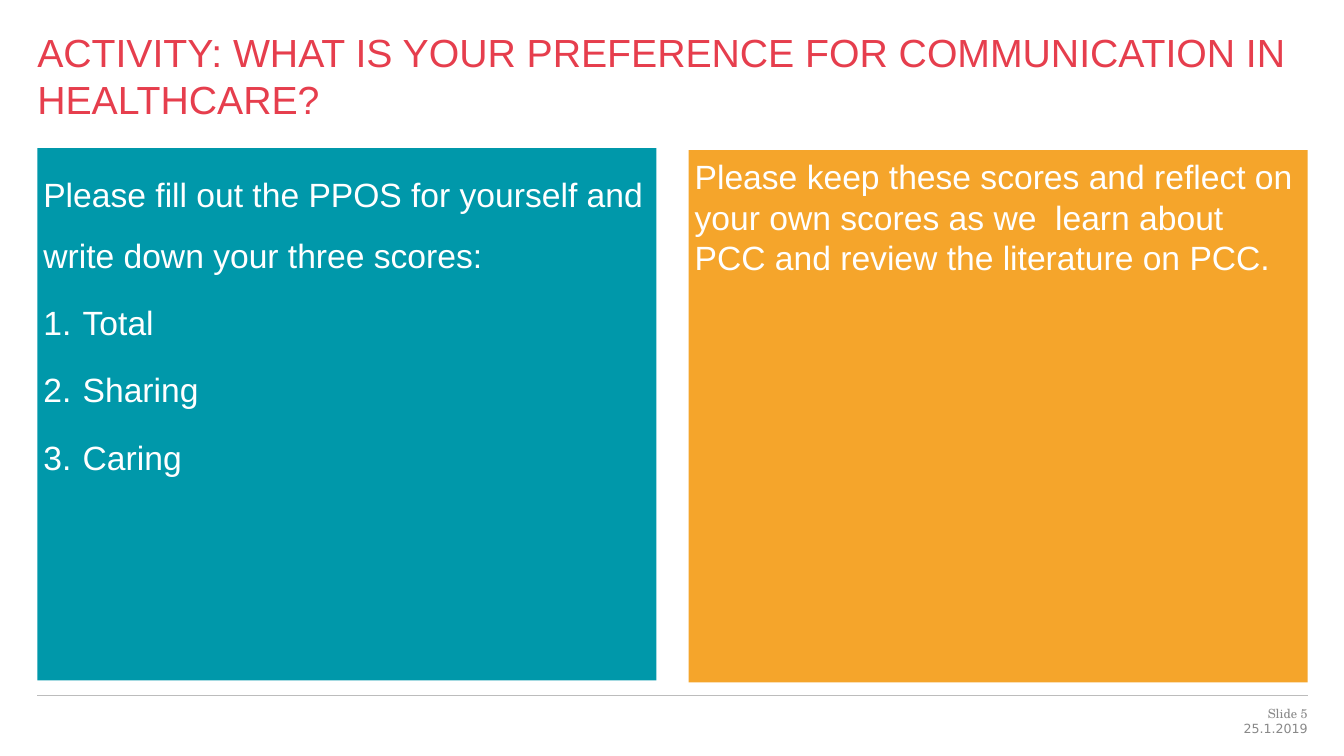
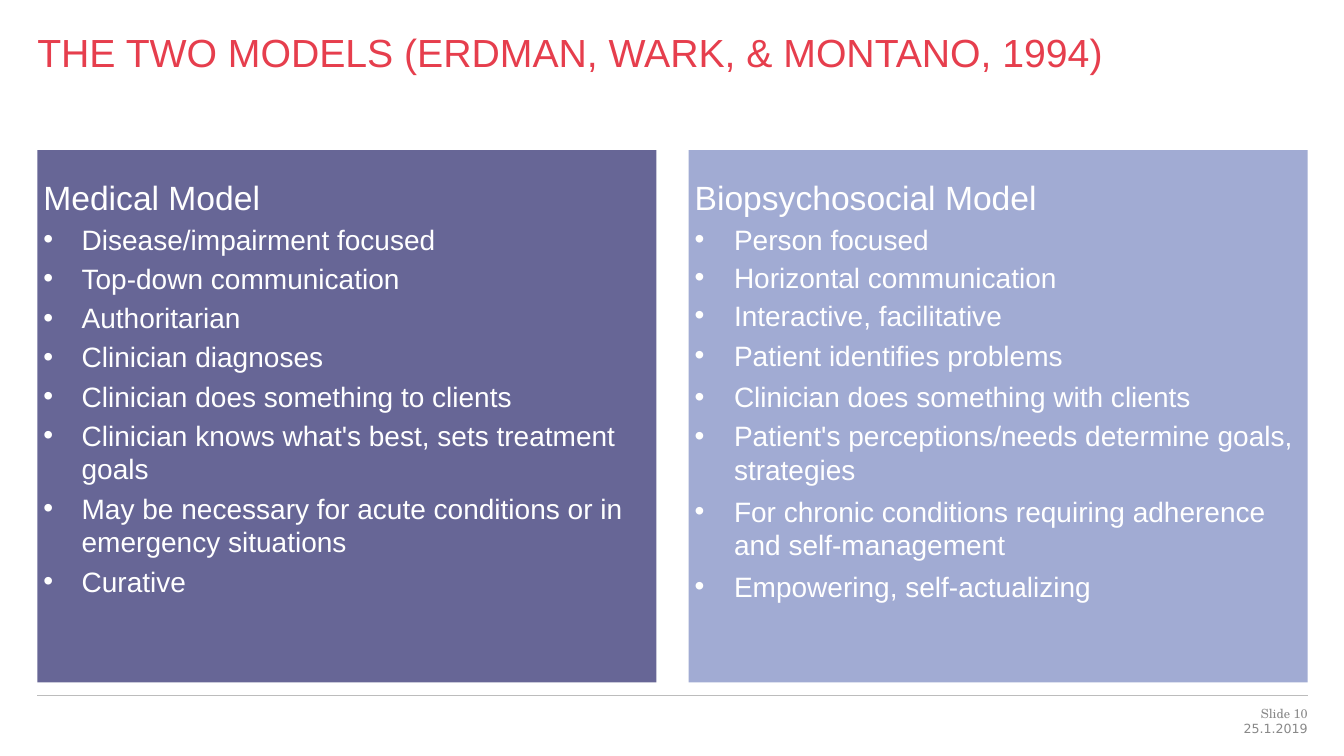
"""Build two slides on communication preferences and models in healthcare."""
from lxml.etree import SubElement
from pptx import Presentation
from pptx.dml.color import RGBColor
from pptx.enum.shapes import MSO_CONNECTOR
from pptx.enum.text import MSO_ANCHOR, MSO_AUTO_SIZE, PP_ALIGN
from pptx.oxml.ns import qn
from pptx.util import Inches, Pt

RED = RGBColor(0xE6, 0x3E, 0x4D)
TEAL = RGBColor(0x00, 0x98, 0xAA)
ORANGE = RGBColor(0xF5, 0xA5, 0x2B)
PURPLE = RGBColor(0x67, 0x66, 0x96)
LAVENDER = RGBColor(0xA1, 0xAB, 0xD3)
WHITE = RGBColor(0xFF, 0xFF, 0xFF)
GREY = RGBColor(0x89, 0x89, 0x89)
RULE_GREY = RGBColor(0xBC, 0xBC, 0xBC)

TEXT_FONT = "Arial"
NUMBER_FONT = "TeX Gyre Schola"
DATE_FONT = "DejaVu Sans"
DATE = "25.1.2019"

LEFT, RIGHT = 0.37, 12.97
PANEL_WIDTH, PANEL_HEIGHT = 6.14, 5.28

NUMBERED = {"size": 24, "spacing": 1.5, "bullet": ("a:buAutoNum", "type", "arabicPeriod")}
BULLETED = {"size": 20, "spacing": 1.0, "bullet": ("a:buChar", "char", "•")}

SLIDES = [
    {
        "title": "ACTIVITY: WHAT IS YOUR PREFERENCE FOR COMMUNICATION IN HEALTHCARE?",
        "number": "Slide 5",
        "panels": [
            {
                "fill": TEAL, "top": 1.47, "lead_spacing": 1.5,
                "lead": "Please fill out the PPOS for yourself and write down your three scores:",
                "style": NUMBERED, "indent": 0.39,
                "items": [("Total", 4.8), ("Sharing", 4.8), ("Caring", 4.8)],
            },
            {
                "fill": ORANGE, "top": 1.49, "lead_spacing": 1.0,
                "lead": "Please keep these scores and reflect on your own scores as we  learn "
                        "about PCC and review the literature on PCC.",
                "style": BULLETED, "indent": 0.39, "items": [],
            },
        ],
    },
    {
        "title": "THE TWO MODELS (ERDMAN, WARK, & MONTANO, 1994)",
        "number": "Slide 10",
        "panels": [
            {
                "fill": PURPLE, "top": 1.49, "lead_spacing": 1.5,
                "lead": "Medical Model",
                "style": BULLETED, "indent": 0.38,
                "items": [
                    ("Disease/impairment focused", 4),
                    ("Top-down communication", 4),
                    ("Authoritarian", 4),
                    ("Clinician diagnoses", 4),
                    ("Clinician does something to clients", 4),
                    ("Clinician knows what's best, sets treatment goals", 4),
                    ("May be necessary for acute conditions or in emergency situations", 4),
                    ("Curative", 4),
                ],
            },
            {
                "fill": LAVENDER, "top": 1.49, "lead_spacing": 1.5,
                "lead": "Biopsychosocial Model",
                "style": BULLETED, "indent": 0.39,
                "items": [
                    ("Person focused", 4),
                    ("Horizontal communication", 3.2),
                    ("Interactive, facilitative", 3.2),
                    ("Patient identifies problems", 4.2),
                    ("Clinician does something with clients", 5.7),
                    ("Patient's perceptions/needs determine goals, strategies", 4),
                    ("For chronic conditions requiring adherence and self-management", 5.8),
                    ("Empowering, self-actualizing", 5.8),
                ],
            },
        ],
    },
]


def place(shape, left, top, width, height):
    shape.left, shape.top = Inches(left), Inches(top)
    shape.width, shape.height = Inches(width), Inches(height)


def prepare_frame(shape, inset):
    frame = shape.text_frame
    frame.word_wrap = True
    frame.auto_size = MSO_AUTO_SIZE.NONE
    frame.vertical_anchor = MSO_ANCHOR.TOP
    frame.margin_left = frame.margin_right = Inches(inset)
    frame.margin_top = frame.margin_bottom = Inches(inset)
    return frame


def add_text(paragraph, text, size, color, font_name=TEXT_FONT, align=PP_ALIGN.LEFT):
    paragraph.alignment = align
    run = paragraph.add_run()
    run.text = text
    run.font.size = Pt(size)
    run.font.name = font_name
    run.font.color.rgb = color


def set_spacing(paragraph, line_spacing, before):
    paragraph.line_spacing = line_spacing
    paragraph.space_before = Pt(before)
    paragraph.space_after = Pt(0)


def set_bullet(paragraph, indent, bullet=None):
    properties = paragraph._p.get_or_add_pPr()
    properties.set("marL", str(Inches(indent)))
    properties.set("indent", str(-Inches(indent)))
    if bullet:
        tag, attribute, value = bullet
        SubElement(properties, qn("a:buFont"), typeface=TEXT_FONT)
        SubElement(properties, qn(tag)).set(attribute, value)
    else:
        SubElement(properties, qn("a:buNone"))


def add_title(slide, text):
    title = slide.shapes.title
    place(title, LEFT, 0.28, RIGHT - LEFT, 0.94)
    paragraph = prepare_frame(title, 0).paragraphs[0]
    add_text(paragraph, text, 28, RED)


def fill_panel(shape, left, panel):
    place(shape, left, panel["top"], PANEL_WIDTH, PANEL_HEIGHT)
    shape.fill.solid()
    shape.fill.fore_color.rgb = panel["fill"]
    frame = prepare_frame(shape, 0.06)
    lead = frame.paragraphs[0]
    set_spacing(lead, panel["lead_spacing"], 0)
    set_bullet(lead, 0)
    add_text(lead, panel["lead"], 24, WHITE)
    style = panel["style"]
    for text, before in panel["items"]:
        paragraph = frame.add_paragraph()
        set_spacing(paragraph, style["spacing"], before)
        set_bullet(paragraph, panel["indent"], style["bullet"])
        add_text(paragraph, text, style["size"], WHITE)


def add_footer(slide, number):
    rule = slide.shapes.add_connector(
        MSO_CONNECTOR.STRAIGHT, Inches(LEFT), Inches(6.9), Inches(RIGHT), Inches(6.9))
    rule.line.color.rgb = RULE_GREY
    rule.line.width = Pt(0.25)
    SubElement(rule._element.spPr, qn("a:effectLst"))
    for text, font_name, top, height in (
            (number, NUMBER_FONT, 7, 0.14), (DATE, DATE_FONT, 7.15, 0.2)):
        box = slide.shapes.add_textbox(
            Inches(RIGHT - 1.85), Inches(top), Inches(1.85), Inches(height))
        paragraph = prepare_frame(box, 0).paragraphs[0]
        add_text(paragraph, text, 9, GREY, font_name, PP_ALIGN.RIGHT)


def main():
    presentation = Presentation()
    presentation.slide_width = Inches(13.33)
    presentation.slide_height = Inches(7.5)
    layout = presentation.slide_layouts.get_by_name("Two Content")
    for content in SLIDES:
        slide = presentation.slides.add_slide(layout)
        add_title(slide, content["title"])
        for index, panel in enumerate(content["panels"]):
            left = (LEFT, RIGHT - PANEL_WIDTH)[index]
            fill_panel(slide.placeholders[index + 1], left, panel)
        add_footer(slide, content["number"])
    presentation.save("out.pptx")


if __name__ == "__main__":
    main()
